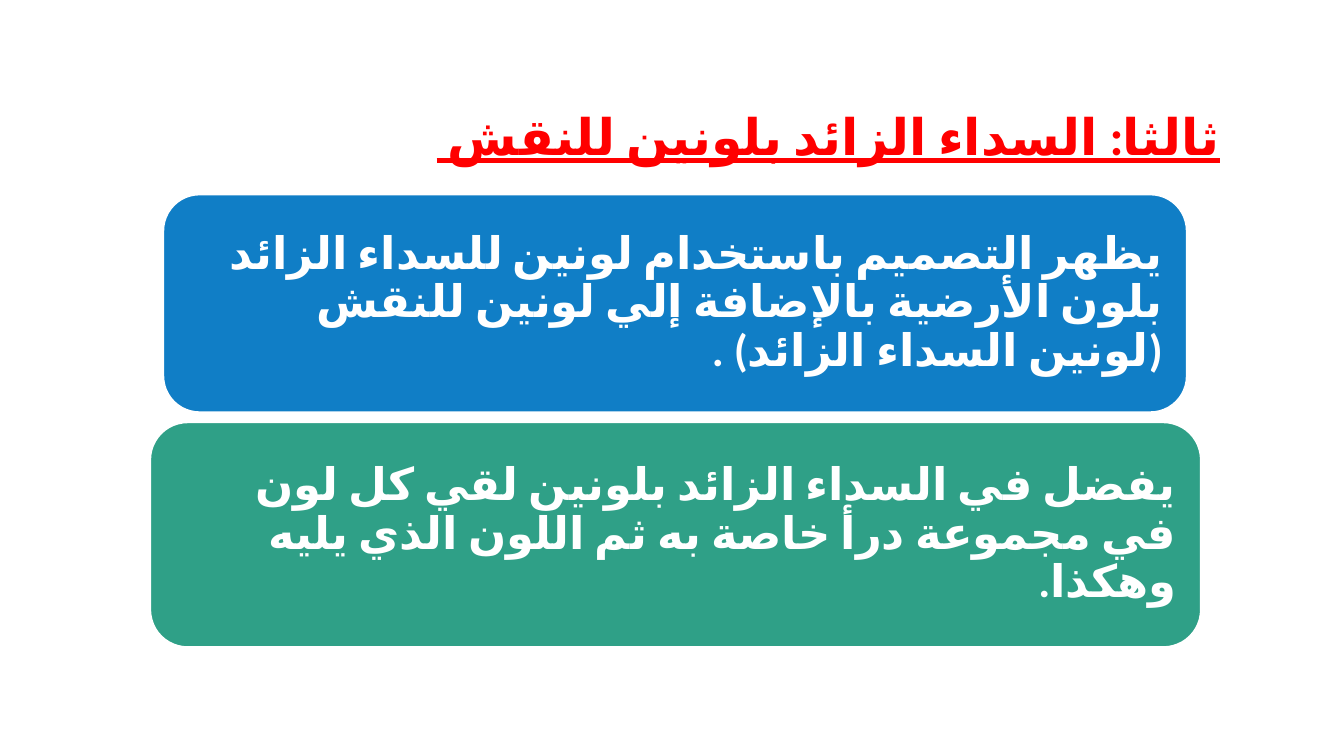
from lxml.etree import SubElement
from pptx import Presentation
from pptx.dml.color import RGBColor
from pptx.enum.shapes import MSO_SHAPE
from pptx.enum.text import MSO_ANCHOR, PP_ALIGN
from pptx.oxml.ns import qn
from pptx.util import Inches, Pt

RED = RGBColor(0xFF, 0x00, 0x00)
WHITE = RGBColor(0xFF, 0xFF, 0xFF)
BLUE = RGBColor(0x10, 0x7E, 0xC6)
GREEN = RGBColor(0x2F, 0xA0, 0x87)

FONT_NAME = "Calibri"
TITLE_FORMAT = {"size": Pt(36), "bold": True, "underline": True}
PANEL_FORMAT = {"size": Pt(32), "bold": True}
PANEL_MARGIN = Inches(0.13)

TITLE = "ثالثا: السداء الزائد بلونين للنقش "
# Left, top, width, height, fill and text of each panel
PANELS = [
    (1.62, 1.93, 10.15, 2.16, BLUE,
     "يظهر التصميم باستخدام لونين للسداء الزائد بلون الأرضية "
     "بالإضافة إلي لونين للنقش (لونين السداء الزائد) ."),
    (1.49, 4.19, 10.42, 2.23, GREEN,
     "يفضل في السداء الزائد بلونين لقي كل لون في مجموعة درأ "
     "خاصة به ثم اللون الذي يليه وهكذا."),
]


def write_arabic(text_frame, text, color, font_format):
    """Fill a text frame with one right-to-left paragraph."""
    text_frame.word_wrap = True
    text_frame.vertical_anchor = MSO_ANCHOR.MIDDLE
    paragraph = text_frame.paragraphs[0]
    paragraph.alignment = PP_ALIGN.RIGHT
    paragraph.line_spacing = 0.9
    paragraph._p.get_or_add_pPr().set("rtl", "1")
    run = paragraph.add_run()
    run.text = text
    run.font.name = FONT_NAME
    run.font.color.rgb = color
    for name, value in font_format.items():
        setattr(run.font, name, value)
    # Arabic letters take the complex script font
    properties = run._r.get_or_add_rPr()
    properties.set("lang", "ar-EG")
    SubElement(properties, qn("a:cs"), typeface=FONT_NAME)


def add_title(slide):
    box = slide.shapes.add_textbox(
        Inches(2.47), Inches(0.82), Inches(9.73), Inches(1.12))
    write_arabic(box.text_frame, TITLE, RED, TITLE_FORMAT)


def add_panel(slide, left, top, width, height, fill, text):
    shape = slide.shapes.add_shape(
        MSO_SHAPE.ROUNDED_RECTANGLE,
        Inches(left), Inches(top), Inches(width), Inches(height))
    shape.shadow.inherit = False
    shape.fill.solid()
    shape.fill.fore_color.rgb = fill
    shape.line.color.rgb = WHITE
    shape.line.width = Pt(1.25)
    for side in ("left", "top", "right", "bottom"):
        setattr(shape.text_frame, f"margin_{side}", PANEL_MARGIN)
    write_arabic(shape.text_frame, text, WHITE, PANEL_FORMAT)


def main():
    presentation = Presentation()
    presentation.slide_width = Inches(13.33)
    presentation.slide_height = Inches(7.5)
    slide = presentation.slides.add_slide(presentation.slide_layouts[6])

    # Heading
    add_title(slide)

    # Coloured panels
    for panel in PANELS:
        add_panel(slide, *panel)

    presentation.save("out.pptx")


if __name__ == "__main__":
    main()
